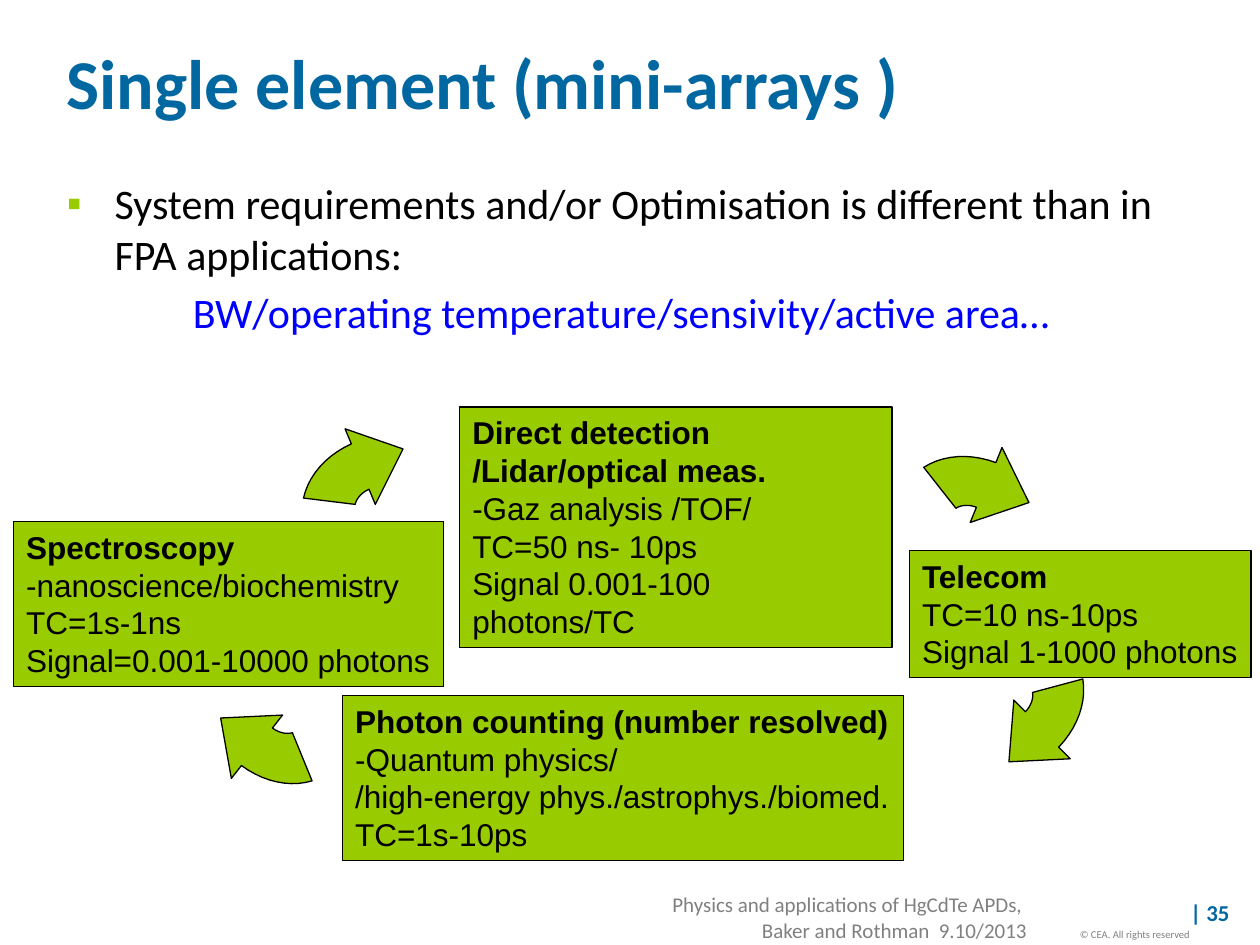
import math
import pptx
import pptx.util
import pptx.dml.color
import pptx.enum.shapes
import pptx.enum.text
import pptx.oxml.ns
from lxml import etree

Inches = pptx.util.Inches
Pt = pptx.util.Pt
RGBColor = pptx.dml.color.RGBColor
ALIGN = pptx.enum.text.PP_ALIGN
ANCHOR = pptx.enum.text.MSO_ANCHOR
FIT = pptx.enum.text.MSO_AUTO_SIZE
RECT = pptx.enum.shapes.MSO_SHAPE.RECTANGLE

GREEN = RGBColor(0x99, 0xCC, 0x00)
BLACK = RGBColor(0, 0, 0)
BLUE = RGBColor(0, 0, 0xFF)
TEAL = RGBColor(0, 0x67, 0xA1)
GRAY = RGBColor(0x80, 0x80, 0x80)


def style(para, size, color, face="Calibri", bold=False, align=ALIGN.LEFT):
    para.alignment = align
    for run in para.runs:
        run.font.name = face
        run.font.size = Pt(size)
        run.font.bold = bold
        run.font.color.rgb = color


def curve(a, b, c, d, steps=10):
    dots = []
    for i in range(steps + 1):
        t = i / steps
        u = 1 - t
        dots.append(tuple(
            u**3 * p + 3 * u * u * t * q + 3 * u * t * t * r + t**3 * s
            for p, q, r, s in zip(a, b, c, d)))
    return dots


deck = pptx.Presentation()
deck.slide_width = Inches(10)
deck.slide_height = Inches(7.5)
slide = deck.slides.add_slide(deck.slide_layouts[1])
shapes = slide.shapes

feet = [
    (7.72, 7.32, 1.82, 0.2, "© CEA. All rights reserved", 6, GRAY, False, ALIGN.RIGHT),
    (4.35, 7.03, 3.9, 0.5,
     "Physics and applications of HgCdTe APDs, \nBaker and Rothman  9.10/2013",
     12, GRAY, False, ALIGN.RIGHT),
    (9.35, 7.08, 0.77, 0.32, "| 35", 13, TEAL, True, ALIGN.LEFT),
]
for x, y, w, h, text, size, color, bold, align in feet:
    foot = shapes.add_textbox(Inches(x), Inches(y), Inches(w), Inches(h))
    foot.text_frame.word_wrap = True
    foot.text_frame.auto_size = FIT.SHAPE_TO_FIT_TEXT
    foot.text_frame.text = text
    for para in foot.text_frame.paragraphs:
        style(para, size, color, bold=bold, align=align)

title = shapes.title
title.left, title.top = Inches(0.43), Inches(-0.02)
title.width, title.height = Inches(9.13), Inches(1.33)
title.text_frame.text = "Single element (mini-arrays )"
title.text_frame.auto_size = FIT.NONE
title.text_frame.vertical_anchor = ANCHOR.MIDDLE
style(title.text_frame.paragraphs[0], 40, TEAL, bold=True)

body = slide.placeholders[1]
body.left, body.top = Inches(0.43), Inches(1.36)
body.width, body.height = Inches(9.13), Inches(1.97)
frame = body.text_frame
frame.auto_size = FIT.NONE
frame.vertical_anchor = ANCHOR.TOP
frame.text = ("System requirements and/or Optimisation is different than in FPA applications:\n"
              "BW/operating temperature/sensivity/active area…")
lead, item = frame.paragraphs
item.level = 1
for para, left, hang, gap, color in [
        (lead, 0.38, 0.38, 0, BLACK), (item, 1.25, 0.25, 4.8, BLUE)]:
    para.space_before = Pt(gap)
    style(para, 24, color)
    props = para._p.get_or_add_pPr()
    props.set("marL", str(Inches(left)))
    props.set("indent", str(-Inches(hang)))
qn = pptx.oxml.ns.qn
props = lead._p.pPr
tint = etree.SubElement(props, qn("a:buClr"))
etree.SubElement(tint, qn("a:srgbClr")).set("val", str(GREEN))
etree.SubElement(props, qn("a:buFont")).set("typeface", "Arial")
etree.SubElement(props, qn("a:buChar")).set("char", "▪")
etree.SubElement(item._p.pPr, qn("a:buNone"))

cards = [
    (0.11, 4.14, 3.41, 1.31, False,
     "Spectroscopy\n-nanoscience/biochemistry\nTC=1s-1ns\nSignal=0.001-10000 photons"),
    (3.65, 3.23, 3.43, 1.91, True,
     "Direct detection /Lidar/optical meas.\n-Gaz analysis /TOF/\n"
     "TC=50 ns- 10ps\nSignal 0.001-100 photons/TC"),
    (2.72, 5.52, 4.45, 1.31, False,
     "Photon counting (number resolved)\n-Quantum physics/\n"
     "/high-energy phys./astrophys./biomed.\nTC=1s-10ps"),
    (7.22, 4.37, 2.71, 1.01, False,
     "Telecom\nTC=10 ns-10ps\nSignal 1-1000 photons"),
]
drawn = []
for x, y, w, h, wrap, text in cards:
    card = shapes.add_shape(RECT, Inches(x), Inches(y), Inches(w), Inches(h))
    card.text_frame.word_wrap = wrap
    card.text_frame.auto_size = FIT.SHAPE_TO_FIT_TEXT
    card.text_frame.vertical_anchor = ANCHOR.TOP
    card.text_frame.text = text
    for i, para in enumerate(card.text_frame.paragraphs):
        style(para, 18, BLACK, "Arial", bold=i == 0)
    drawn.append(card)

inner = curve((2.9, 3.89), (2.85, 3.91), (2.8, 3.96), (2.79, 4.01))
outer = curve((2.38, 3.96), (2.42, 3.78), (2.56, 3.62), (2.76, 3.53))
arrow = inner + outer + [(2.71, 3.41), (3.17, 3.57), (2.95, 4.01)]
wide, high = 1.21, 1.06
base = 332.1
hub_x, hub_y = 2.35 + wide / 2, 3.49 + high / 2
cos, sin = math.cos(math.radians(-base)), math.sin(math.radians(-base))
level = [(wide / 2 + (x - hub_x) * cos - (y - hub_y) * sin,
          high / 2 + (x - hub_x) * sin + (y - hub_y) * cos) for x, y in arrow]
for x, y, turn in [(2.35, 3.49, base), (7.11, 3.63, 16.9),
                   (7.48, 5.12, 130.1), (1.61, 5.25, 212.9)]:
    dots = [(Inches(x + dx), Inches(y + dy)) for dx, dy in level]
    pen = shapes.build_freeform(Inches(x), Inches(y))
    pen.move_to(*dots[0])
    pen.add_line_segments(dots[1:], close=True)
    pen.move_to(Inches(x + wide), Inches(y + high))
    shape = pen.convert_to_shape()
    shape.rotation = turn
    drawn.append(shape)

for shape in drawn:
    shape.shadow.inherit = False
    shape.fill.solid()
    shape.fill.fore_color.rgb = GREEN
    shape.line.color.rgb = BLACK
    shape.line.width = Pt(0.75)

deck.save("out.pptx")
